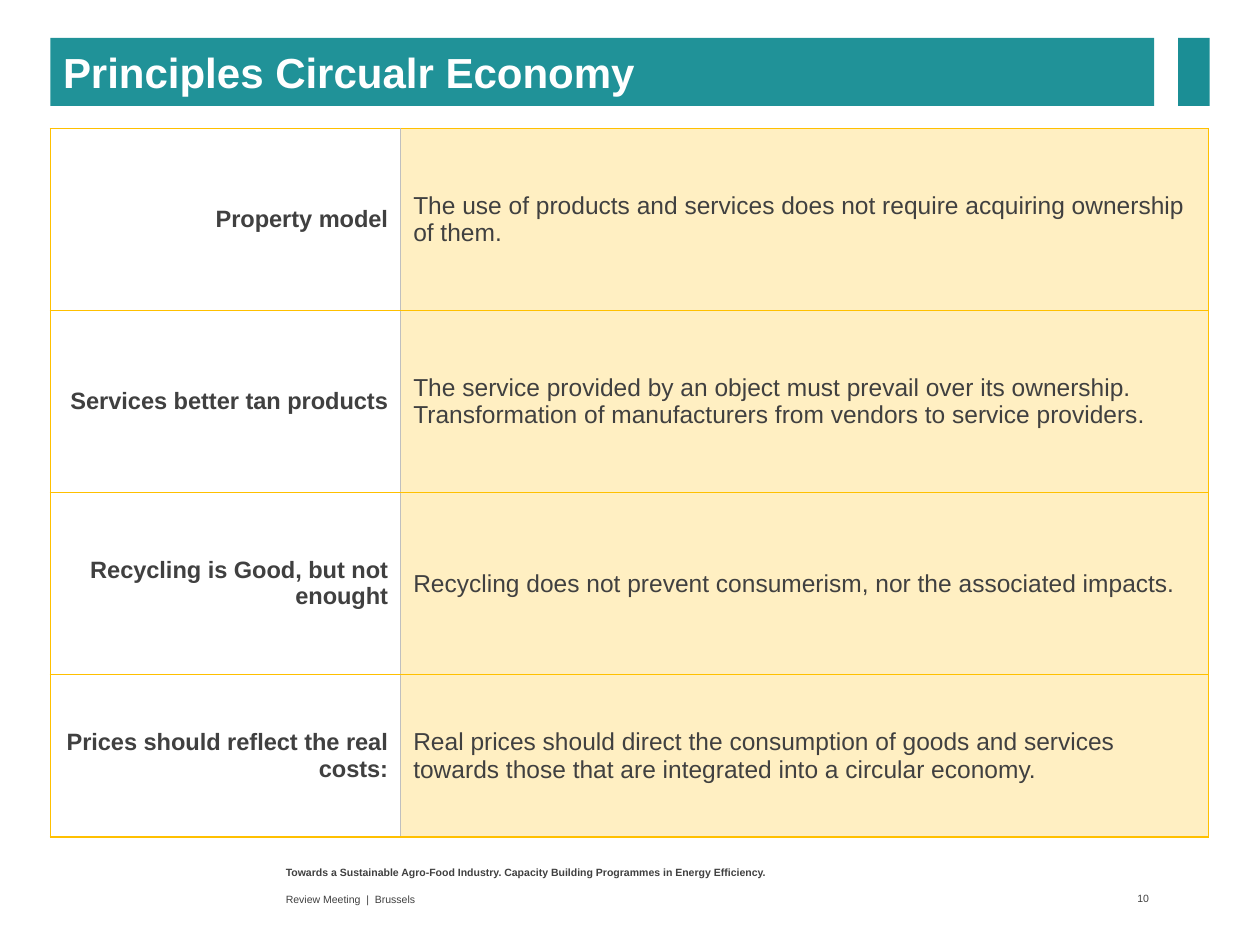
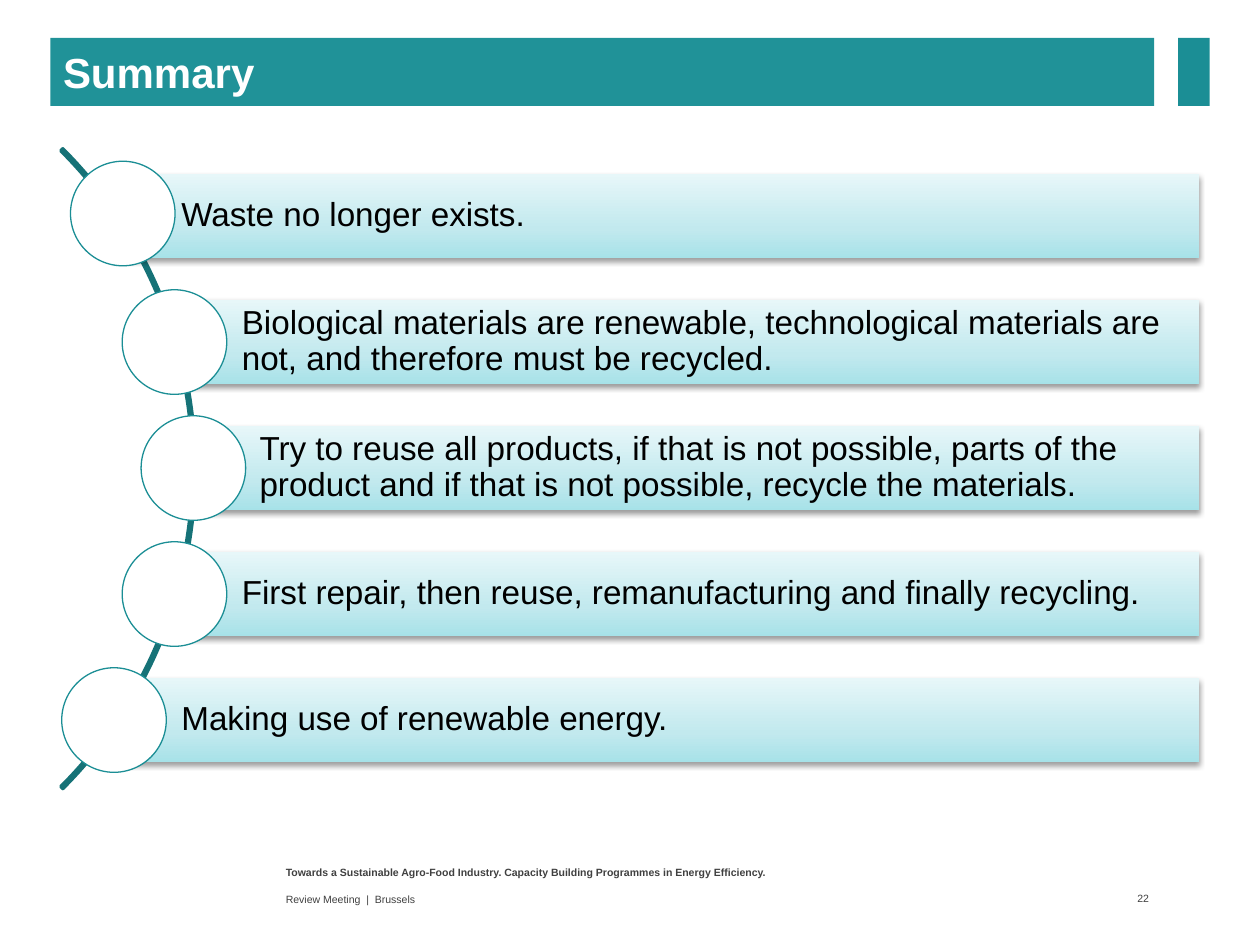
import pptx
import pptx.util
import pptx.dml.color
import pptx.enum.shapes
import pptx.enum.text
import pptx.oxml.ns
from lxml import etree

Inches, Pt = pptx.util.Inches, pptx.util.Pt
RGB = pptx.dml.color.RGBColor
Shape = pptx.enum.shapes.MSO_SHAPE
Align = pptx.enum.text.PP_ALIGN
Anchor = pptx.enum.text.MSO_ANCHOR
qn = pptx.oxml.ns.qn

TEAL = RGB(0x20, 0x92, 0x98)
EDGE = RGB(0x1B, 0x8E, 0x95)
ARC = RGB(0x16, 0x72, 0x77)
GOLD = RGB(0xFF, 0xC0, 0x00)
GREY = RGB(0xBF, 0xBF, 0xBF)
INK = RGB(0x40, 0x40, 0x40)
BLACK = RGB(0, 0, 0)
WHITE = RGB(0xFF, 0xFF, 0xFF)
SHADES = [(0, RGB(0xA7, 0xE2, 0xE8)), (35, RGB(0xC2, 0xE9, 0xEE)),
          (100, RGB(0xE7, 0xF7, 0xF9))]

RULES = [
    ("Property model",
     "The use of products and services does not require acquiring ownership of them."),
    ("Services better tan products",
     "The service provided by an object must prevail over its ownership. "
     "Transformation of manufacturers from vendors to service providers."),
    ("Recycling is Good, but not enought",
     "Recycling does not prevent consumerism, nor the associated impacts."),
    ("Prices should reflect the real costs:",
     "Real prices should direct the consumption of goods and services "
     "towards those that are integrated into a circular economy."),
]
POINTS = [
    (0.91, 0.56, 1.28, "Waste no longer exists."),
    (1.39, 0.97, 2.3, "Biological materials are renewable, technological materials are "
     "not, and therefore must be recycled."),
    (1.53, 1.12, 3.3, "Try to reuse all products, if that is not possible, parts of the "
     "product and if that is not possible, recycle the materials."),
    (1.39, 0.97, 4.3, "First repair, then reuse, remanufacturing and finally recycling."),
    (0.91, 0.49, 5.3, "Making use of renewable energy."),
]


def node(home, tag, **attrs):
    """Append a drawing element with the given attributes."""
    return etree.SubElement(home, qn("a:" + tag), {k: str(v) for k, v in attrs.items()})


def write(frame, text, size, color, bold=False, align=Align.LEFT):
    """Write one run into a wrapped, vertically centred frame."""
    frame.word_wrap = True
    frame.vertical_anchor = Anchor.MIDDLE
    para = frame.paragraphs[0]
    para.alignment = align
    run = para.add_run()
    run.text = text
    font = run.font
    font.name, font.size, font.bold = "Arial", Pt(size), bold
    font.color.rgb = color
    return para


def shape(slide, kind, box, fill=None, line=None, width=0.75):
    """Add a preset shape without shadow."""
    item = slide.shapes.add_shape(kind, *map(Inches, box))
    item.shadow.inherit = False
    if fill is None:
        item.fill.background()
    else:
        item.fill.solid()
        item.fill.fore_color.rgb = fill
    if line is None:
        item.line.fill.background()
    else:
        item.line.color.rgb = line
        item.line.width = Pt(width)
    return item


def label(slide, box, text, **style):
    """Add a line of footer text."""
    frame = slide.shapes.add_textbox(*map(Inches, box)).text_frame
    write(frame, text, 6, INK, **style)
    return frame


def page(deck, title, number):
    """Add a slide with title band, side block and footer."""
    slide = deck.slides.add_slide(deck.slide_layouts[5])
    label(slide, (2.17, 6.82, 5.5, 0.21), "Towards a Sustainable Agro-Food Industry. "
          "Capacity Building Programmes in Energy Efficiency.", bold=True)
    label(slide, (2.17, 7.04, 5.5, 0.19), "Review Meeting  |  Brussels")
    frame = label(slide, (8.6, 7.03, 0.56, 0.2), str(number), align=Align.RIGHT)
    frame.margin_right = Inches(0.04)
    band = slide.shapes.title
    band.left, band.top, band.width, band.height = map(Inches, (0.4, 0.3, 8.76, 0.54))
    band.fill.solid()
    band.fill.fore_color.rgb = TEAL
    band.text_frame.auto_size = pptx.enum.text.MSO_AUTO_SIZE.NONE
    write(band.text_frame, title, 24, WHITE, bold=True)
    shape(slide, Shape.RECTANGLE, (9.35, 0.3, 0.25, 0.54), EDGE)
    return slide


def border(cell, side, color, width):
    """Draw one side of a table cell."""
    line = node(cell._tc.get_or_add_tcPr(), "ln" + side, w=Pt(width))
    node(node(line, "solidFill"), "srgbClr", val=color)


def fill_cell(cell, col, text):
    """Style and fill a cell of the name or the text column."""
    for side in "LRTB":
        inner = side == "LR"[1 - col]
        border(cell, side, GREY if inner else GOLD, 0.5 if inner else 1)
    cell.fill.solid()
    cell.fill.fore_color.rgb = (WHITE, GOLD)[col]
    if col:
        node(cell._tc.tcPr.find(qn("a:solidFill"))[0], "alpha", val=24000)
    cell.vertical_anchor = Anchor.MIDDLE
    write(cell.text_frame, text, (13.5, 14)[col], INK, bold=not col,
          align=(Align.RIGHT, Align.LEFT)[col])


def grid(slide):
    """Add the table of principles."""
    table = slide.shapes.add_table(
        len(RULES), 2, *map(Inches, (0.4, 1.02, 9.19, 5.64))).table
    table.first_row = table.horz_banding = False
    for col, width in enumerate((2.78, 6.41)):
        table.columns[col].width = Inches(width)
    for row, texts in enumerate(RULES):
        table.rows[row].height = Inches(1.29 if row == len(RULES) - 1 else 1.445)
        for col, text in enumerate(texts):
            fill_cell(table.cell(row, col), col, text)


def shade(item):
    """Give a bar its rising gradient and soft shadow."""
    item.fill.gradient()
    props = item._element.spPr
    grad = props.find(qn("a:gradFill"))
    for child in list(grad):
        grad.remove(child)
    stops = node(grad, "gsLst")
    for pos, color in SHADES:
        node(node(stops, "gs", pos=pos * 1000), "srgbClr", val=color)
    node(grad, "lin", ang=270 * 60000, scaled=0)
    cast = node(props.find(qn("a:effectLst")), "outerShdw", blurRad=Pt(3.1),
                dist=Pt(1.6), dir=90 * 60000, rotWithShape=0)
    node(node(cast, "srgbClr", val=BLACK), "alpha", val=38000)


def bar(slide, left, top, text):
    """Add a shaded bar that ends at the shared right edge."""
    item = shape(slide, Shape.RECTANGLE, (left, top, 9.52 - left, 0.67), WHITE)
    shade(item)
    frame = item.text_frame
    frame.margin_left, frame.margin_right = Inches(0.53), Inches(0.05)
    write(frame, text, 19, BLACK).line_spacing = 0.9


def chain(slide):
    """Add the arc with its bars and circles."""
    arc = shape(slide, Shape.BLOCK_ARC, (-5.63, 0.13, 7.18, 7.18), line=ARC, width=2)
    for slot, value in enumerate((189, 27, 0.003)):
        arc.adjustments[slot] = value
    for step, (left, ring, top, text) in enumerate(POINTS):
        bar(slide, left, 1.38 + step, text)
        shape(slide, Shape.OVAL, (ring, top, 0.83, 0.83), WHITE, EDGE)


def main():
    """Build and save the deck."""
    deck = pptx.Presentation()
    deck.slide_width, deck.slide_height = Inches(10), Inches(7.5)
    grid(page(deck, "Principles Circualr Economy", 10))
    chain(page(deck, "Summary", 22))
    deck.save("out.pptx")


if __name__ == "__main__":
    main()
